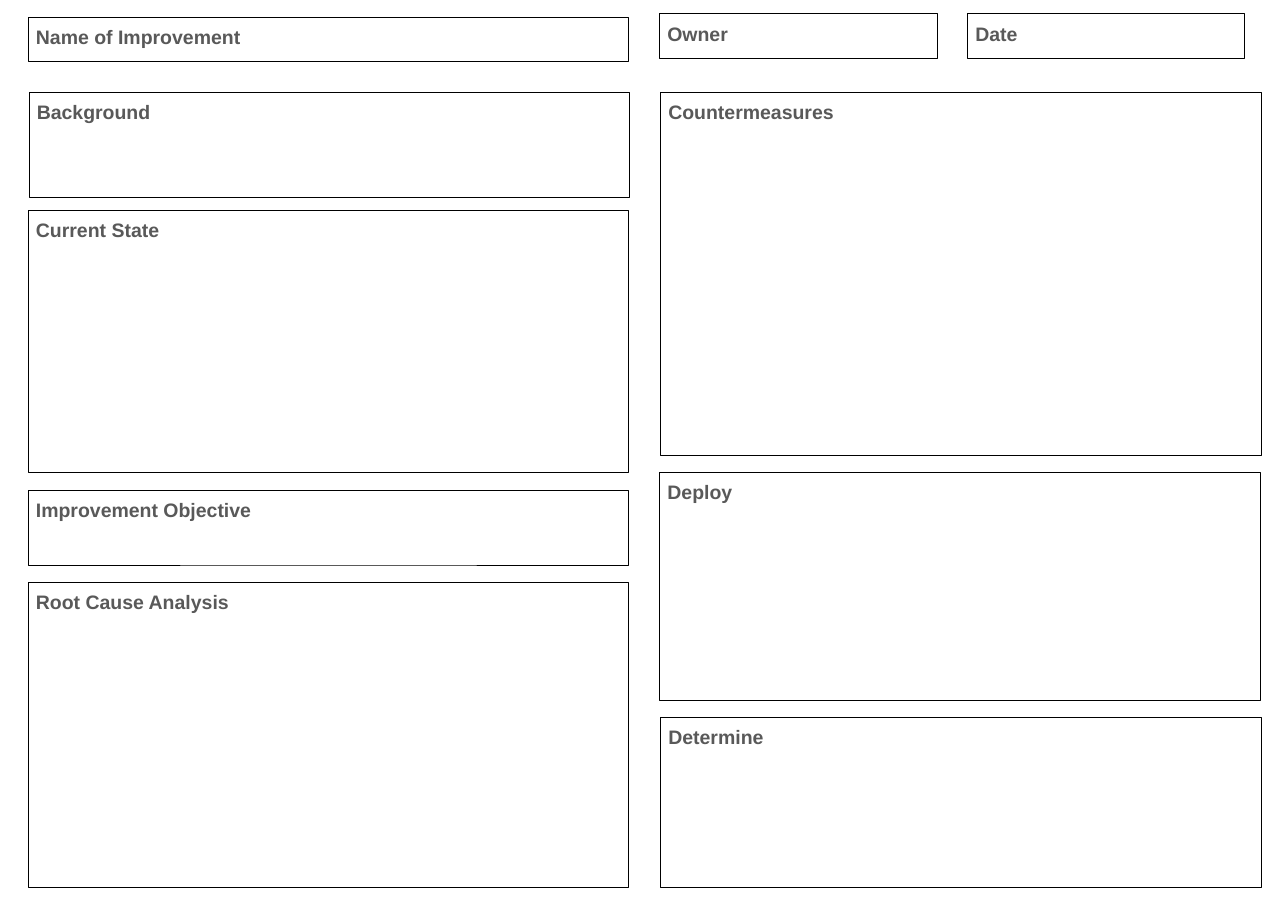
from pptx import Presentation
from pptx.dml.color import RGBColor
from pptx.enum.shapes import MSO_SHAPE as Shape
from pptx.enum.text import MSO_ANCHOR as Anchor, PP_ALIGN as Align
from pptx.util import Pt

BLACK = RGBColor(0x00, 0x00, 0x00)
GRAY = RGBColor(0x59, 0x59, 0x59)

PAGE_WIDTH = 1190.5
PAGE_HEIGHT = 841.89
PANEL_WIDTH = 555.1
FIELD_WIDTH = 256.3
FIELD_HEIGHT = 41.2
INSET = 7.2

HEADER_FIELDS = [
    ("Name of Improvement", 26.1, 15.8, PANEL_WIDTH),
    ("Owner", 609.8, 12.7, FIELD_WIDTH),
    ("Date", 894.4, 12.7, FIELD_WIDTH),
]
PANELS = [
    ("Background", 26.9, 85.7, 96.5),
    ("Current State", 26.1, 194.4, 242.2),
    ("Improvement Objective", 26.1, 453.1, 69.1),
    ("Root Cause Analysis", 26.1, 538.1, 282.2),
    ("Countermeasures", 610.6, 85.7, 335.5),
    ("Deploy", 609.8, 436.6, 210.3),
    ("Determine", 610.6, 662.7, 157.3),
]


def write_text(frame, text, size=18, color=GRAY, bold=True, font="Arial"):
    """Write one left-aligned line at the top of a text frame."""
    frame.word_wrap = True
    frame.vertical_anchor = Anchor.TOP
    frame.margin_left = frame.margin_right = Pt(INSET)
    frame.margin_top = frame.margin_bottom = Pt(INSET)
    para = frame.paragraphs[0]
    para.alignment = Align.LEFT
    span = para.add_run()
    span.text = text
    span.font.name = font
    span.font.size = Pt(size)
    span.font.bold = bold
    span.font.color.rgb = color


def add_box(page, label, left, top, width, height):
    """Add an unfilled, outlined box with its label."""
    box = page.shapes.add_shape(
        Shape.RECTANGLE, Pt(left), Pt(top), Pt(width), Pt(height))
    box.shadow.inherit = False
    box.fill.background()
    box.line.color.rgb = BLACK
    box.line.width = Pt(0.75)
    write_text(box.text_frame, label)


def main():
    """Build the improvement sheet and save it."""
    deck = Presentation()
    deck.slide_width = Pt(PAGE_WIDTH)
    deck.slide_height = Pt(PAGE_HEIGHT)
    page = deck.slides.add_slide(deck.slide_layouts.get_by_name("Blank"))
    for label, left, top, width in HEADER_FIELDS:
        add_box(page, label, left, top, width, FIELD_HEIGHT)
    for label, left, top, height in PANELS:
        add_box(page, label, left, top, PANEL_WIDTH, height)
    deck.save("out.pptx")


if __name__ == "__main__":
    main()
